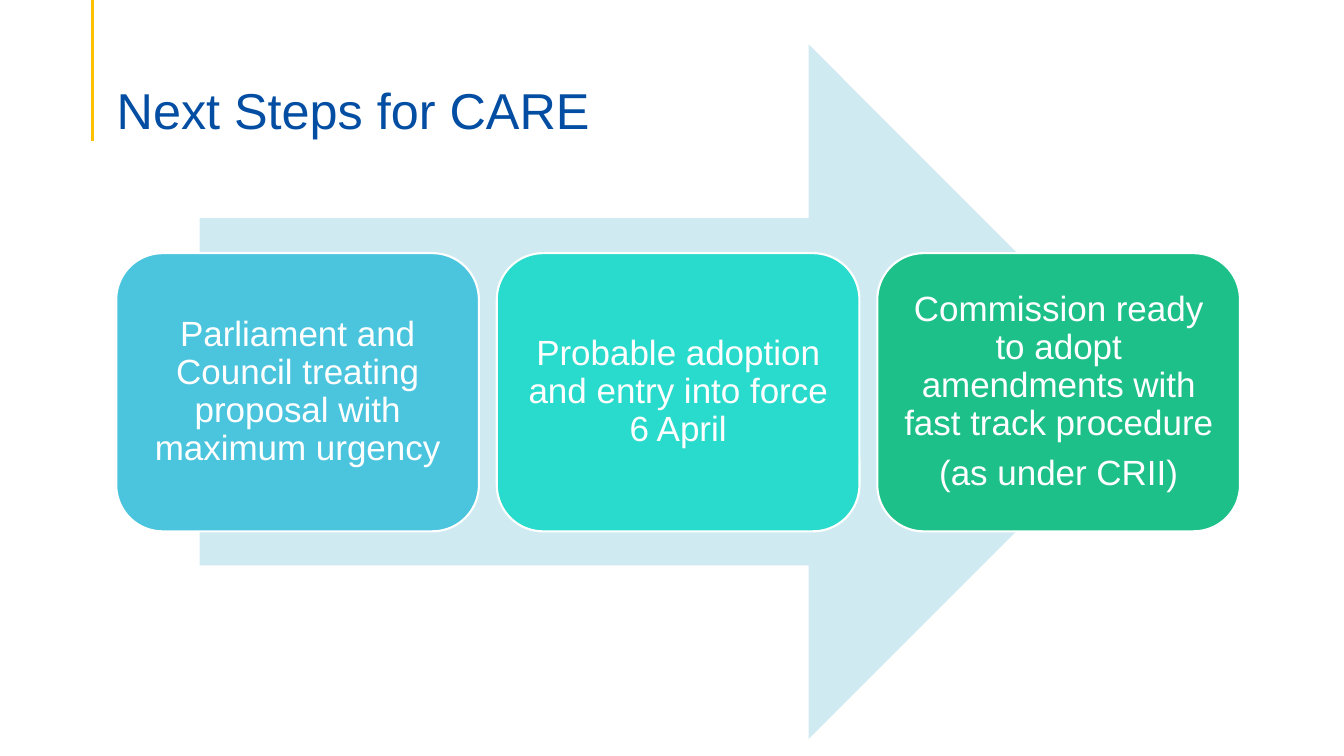
from dataclasses import dataclass

from lxml import etree
from pptx import Presentation
from pptx.dml.color import RGBColor
from pptx.enum import shapes, text
from pptx.oxml import ns
from pptx.util import Cm, Pt


@dataclass(frozen=True)
class Theme:
    font: str = "Arial"
    title: str = "034EA2"
    rule: str = "FFC000"
    arrow: str = "D0EAF2"
    white: str = "FFFFFF"
    head: int = 36
    body: int = 25


THEME = Theme()

STEPS = [
    ("4BC5DE", ["Parliament and Council treating proposal with maximum urgency"]),
    ("29DBCC", ["Probable adoption and entry into force 6 April"]),
    ("1EC08A", ["Commission ready to adopt amendments with fast track procedure",
                "(as under CRII)"]),
]


def color(code):
    return RGBColor.from_string(code)


def write(shape, lines, size, ink, align, anchor, pad, gap=0):
    """Fill a shape with paragraphs; pad is left, top, right, bottom in cm."""
    frame = shape.text_frame
    frame.word_wrap = True
    frame.vertical_anchor = anchor
    (frame.margin_left, frame.margin_top,
     frame.margin_right, frame.margin_bottom) = map(Cm, pad)
    for i, line in enumerate(lines):
        para = frame.add_paragraph() if i else frame.paragraphs[0]
        para.alignment = align
        para.line_spacing = 0.9
        para.space_after = Pt(gap)
        run = para.add_run()
        run.text = line
        run.font.name = THEME.font
        run.font.size = Pt(size)
        run.font.color.rgb = color(ink)


def block(slide, kind, box, fill, edge=None):
    shape = slide.shapes.add_shape(kind, *map(Cm, box))
    shape.shadow.inherit = False
    shape.fill.solid()
    shape.fill.fore_color.rgb = color(fill)
    if edge:
        shape.line.color.rgb = color(edge)
        shape.line.width = Pt(1.5)
    else:
        shape.line.fill.background()
    return shape


def rule(slide, x, end):
    line = slide.shapes.add_connector(
        shapes.MSO_CONNECTOR.STRAIGHT, Cm(x), Cm(0), Cm(x), Cm(end))
    line.line.color.rgb = color(THEME.rule)
    line.line.width = Pt(2.25)
    props = line._element.spPr
    etree.SubElement(props, ns.qn("a:effectLst"))


def title(slide, words):
    box = slide.shapes.add_textbox(Cm(2.69), Cm(1.35), Cm(29.59), Cm(2.18))
    write(box, [words], THEME.head, THEME.title, text.PP_ALIGN.LEFT,
          text.MSO_ANCHOR.BOTTOM, (0.25, 0.13, 0.25, 0))


def cards(slide, left, top, wide, high, pitch):
    for i, (fill, lines) in enumerate(STEPS):
        card = block(slide, shapes.MSO_SHAPE.ROUNDED_RECTANGLE,
                     (left + i * pitch, top, wide, high), fill, THEME.white)
        write(card, lines, THEME.body, THEME.white, text.PP_ALIGN.CENTER,
              text.MSO_ANCHOR.MIDDLE, [0.25] * 4, gap=8.75)


def main():
    deck = Presentation()
    deck.slide_width, deck.slide_height = Cm(33.87), Cm(19.05)
    slide = deck.slides.add_slide(deck.slide_layouts[6])
    rule(slide, 2.34, 3.56)
    title(slide, "Next Steps for CARE")
    block(slide, shapes.MSO_SHAPE.RIGHT_ARROW, (5.03, 1.12, 24.1, 17.5), THEME.arrow)
    cards(slide, left=2.93, top=6.38, wide=9.14, high=7.01, pitch=9.59)
    deck.save("out.pptx")


if __name__ == "__main__":
    main()
